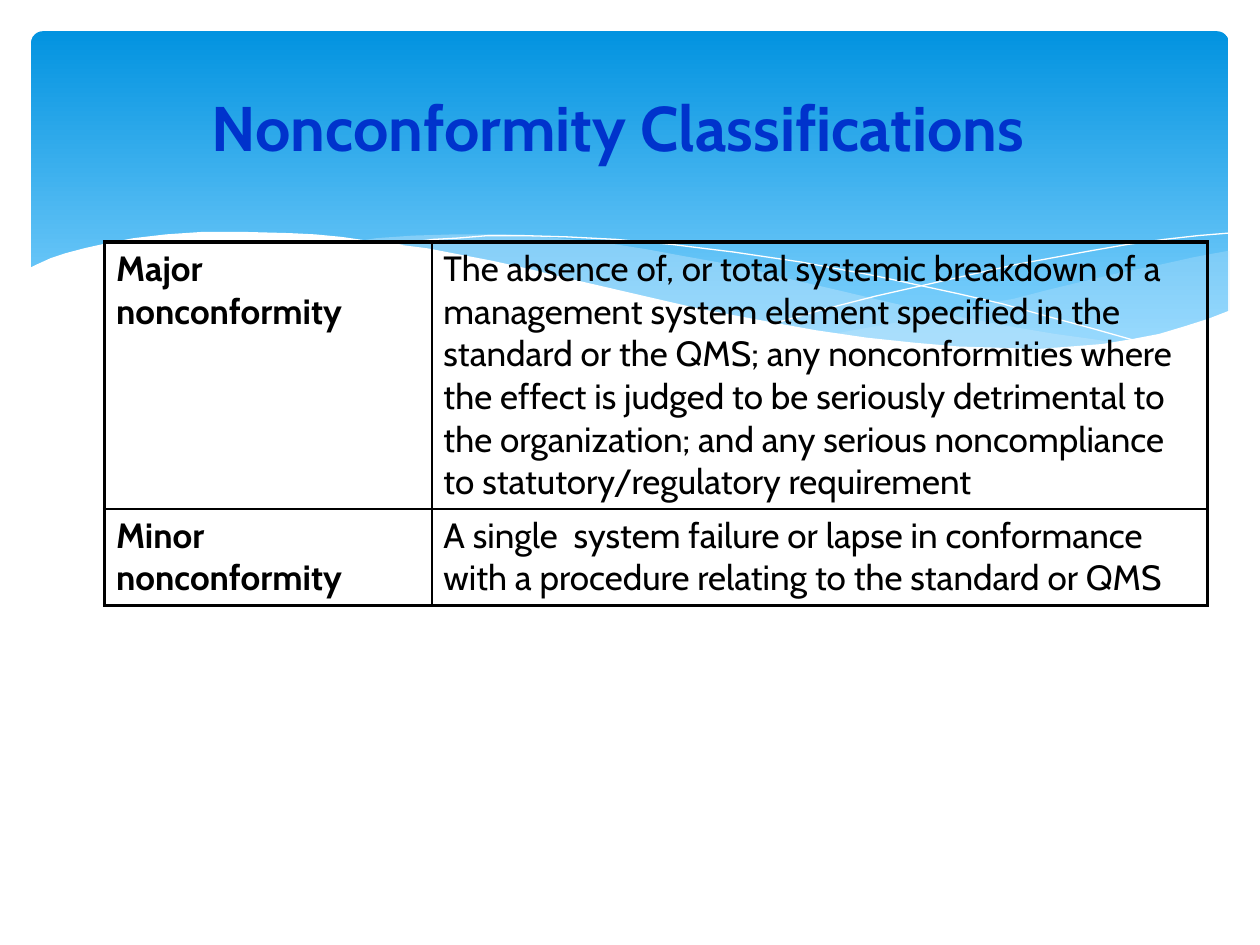
from lxml.etree import SubElement
from pptx import Presentation
from pptx.dml.color import RGBColor
from pptx.enum.shapes import MSO_SHAPE as Preset
from pptx.enum.text import MSO_ANCHOR as Anchor, MSO_AUTO_SIZE as AutoSize, PP_ALIGN as Align
from pptx.oxml.ns import qn
from pptx.util import Cm, Pt

COLORS = {
    "band_top": "0293E0", "band_bottom": "83D3FE", "wave": "C6E7FC",
    "paper": "FFFFFF", "title": "0033CC", "text": "000000", "border": "000000",
}
FONT = "Cabin"
WAVE_UNIT = Cm(0.0254)
THICK, THIN = Pt(2.25), Pt(1)

RIGHT_WAVE = [
    (975, 199), (948, 204), (921, 210), (891, 216), (861, 223), (832, 230), (805, 237),
    (779, 242), (753, 248), (706, 257), (661, 265), (691, 269), (718, 272), (745, 275),
    (769, 277), (803, 278), (835, 277), (863, 275), (889, 272), (913, 267), (935, 261),
    (949, 257), (963, 252), (976, 247), (976, 199),
]
MIDDLE_WAVE = [
    (893, 273), (866, 269), (837, 265), (807, 260), (775, 254), (741, 248), (706, 240),
    (668, 231), (629, 222), (598, 214), (569, 208), (541, 203), (514, 198), (489, 194),
    (465, 191), (442, 189), (420, 187), (399, 186), (361, 186), (328, 187), (299, 189),
    (286, 191), (323, 196), (362, 203), (404, 211), (449, 222), (491, 232), (530, 240),
    (566, 248), (601, 255), (634, 261), (665, 266), (695, 270), (722, 274), (748, 276),
    (773, 277), (796, 278), (828, 278), (857, 277), (876, 275),
]
LONG_LINE = [
    (309, 195), (328, 192), (344, 190), (363, 189), (387, 187), (416, 187), (450, 188),
    (489, 190), (533, 194), (582, 200), (636, 208), (695, 219), (760, 233), (795, 241),
    (831, 251), (868, 261), (907, 272),
]
RIGHT_LINE = [
    (613, 257), (652, 246), (695, 235), (748, 223), (806, 210), (866, 199), (895, 194),
    (924, 190), (951, 187), (975, 185),
]
PAPER_WAVE = [
    (977, 246), (959, 253), (940, 259), (920, 265), (899, 269), (875, 273), (850, 275),
    (823, 277), (793, 276), (761, 275), (726, 272), (688, 268), (647, 262), (603, 254),
    (555, 245), (503, 233), (447, 220), (418, 213), (391, 207), (365, 202), (339, 197),
    (315, 194), (292, 191), (271, 188), (250, 186), (230, 185), (193, 184), (161, 184),
    (132, 186), (106, 189), (85, 193), (67, 197), (52, 201), (40, 205), (29, 210),
    (23, 213), (23, 329), (977, 329),
]
DEFINITIONS = [
    ("Major nonconformity",
     "The absence of, or total systemic breakdown of a management system element specified "
     "in the standard or the QMS; any nonconformities where the effect is judged to be "
     "seriously detrimental to the organization; and any serious noncompliance to "
     "statutory/regulatory requirement"),
    ("Minor nonconformity",
     "A single  system failure or lapse in conformance with a procedure relating to the "
     "standard or QMS"),
]


def color(name):
    return RGBColor.from_string(COLORS[name])


def write_text(frame, text, size=20, bold=False, color_name="text", align=Align.LEFT):
    frame.word_wrap = True
    paragraph = frame.paragraphs[0]
    paragraph.alignment = align
    run = paragraph.add_run()
    run.text = text
    run.font.name = FONT
    run.font.size = Pt(size)
    run.font.bold = bold
    run.font.color.rgb = color(color_name)


def draw_wave(slide, origin, points, fill=None, opacity=100):
    builder = slide.shapes.build_freeform(*points[0], scale=WAVE_UNIT)
    builder.add_line_segments(points[1:], close=fill is not None)
    shape = builder.convert_to_shape(*origin)
    shape.shadow.inherit = False
    if fill is None:
        shape.fill.background()
        shape.line.color.rgb = color("paper")
        shape.line.width = Pt(0)
        return
    shape.line.fill.background()
    shape.fill.solid()
    shape.fill.fore_color.rgb = color(fill)
    if opacity < 100:
        rgb = shape.fill._xPr.find(".//" + qn("a:srgbClr"))
        SubElement(rgb, qn("a:alpha"), val=str(opacity * 1000))


def draw_background(slide, left, top, width):
    margin = Cm(0.63)
    band = slide.shapes.add_shape(Preset.ROUNDED_RECTANGLE, left + margin, top + margin,
                                  width - 2 * margin, Cm(6.86))
    band.adjustments[0] = 0.034
    band.shadow.inherit = False
    band.line.fill.background()
    band.fill.gradient()
    band.fill.gradient_angle = 270
    stops = zip(band.fill.gradient_stops, ("band_top", "band_bottom"), (0, 0.9))
    for stop, name, position in stops:
        stop.color.rgb = color(name)
        stop.position = position

    origin = (left, top)
    draw_wave(slide, origin, RIGHT_WAVE, fill="wave", opacity=29)
    draw_wave(slide, origin, MIDDLE_WAVE, fill="wave", opacity=40)
    draw_wave(slide, origin, LONG_LINE)
    draw_wave(slide, origin, RIGHT_LINE)
    draw_wave(slide, origin, PAPER_WAVE, fill="paper")


def place_title(slide, left, top, width, height):
    title = slide.shapes.title
    title.left, title.top, title.width, title.height = left, top, width, height
    slide.shapes._spTree.append(title._element)
    frame = title.text_frame
    frame.auto_size = AutoSize.NONE
    frame.vertical_anchor = Anchor.MIDDLE
    write_text(frame, "Nonconformity Classifications", size=36, bold=True, color_name="title")


def set_border(cell, side, width):
    line = SubElement(cell._tc.get_or_add_tcPr(), qn("a:ln" + side), w=str(width))
    fill = SubElement(line, qn("a:solidFill"))
    SubElement(fill, qn("a:srgbClr"), val=COLORS["border"])


def draw_definitions(slide, left, top, width, height):
    row_count, column_count = len(DEFINITIONS), len(DEFINITIONS[0])
    table = slide.shapes.add_table(row_count, column_count, left, top, width, height).table
    table.first_row = table.horz_banding = False
    label_width = Cm(6.6)
    table.columns[0].width = label_width
    table.columns[1].width = width - label_width
    table.rows[0].height = Cm(4.93)
    table.rows[1].height = Cm(1.78)
    for row, texts in enumerate(DEFINITIONS):
        for column, text in enumerate(texts):
            cell = table.cell(row, column)
            cell.margin_left = cell.margin_right = Cm(0.23)
            cell.margin_top = cell.margin_bottom = Cm(0.11)
            outer_sides = {"L": column == 0, "R": column == column_count - 1,
                           "T": row == 0, "B": row == row_count - 1}
            for side, is_outer in outer_sides.items():
                set_border(cell, side, THICK if is_outer else THIN)
            cell.fill.background()
            write_text(cell.text_frame, text, bold=column == 0)


def main():
    presentation = Presentation()
    presentation.slide_width, presentation.slide_height = Cm(25.4), Cm(19.05)
    slide = presentation.slides.add_slide(presentation.slide_layouts[5])
    draw_background(slide, Cm(0), Cm(0), presentation.slide_width)
    place_title(slide, Cm(4.01), Cm(1.07), Cm(17.58), Cm(2.97))
    draw_definitions(slide, Cm(2.11), Cm(4.88), Cm(22.23), Cm(7.24))
    presentation.save("out.pptx")


if __name__ == "__main__":
    main()
